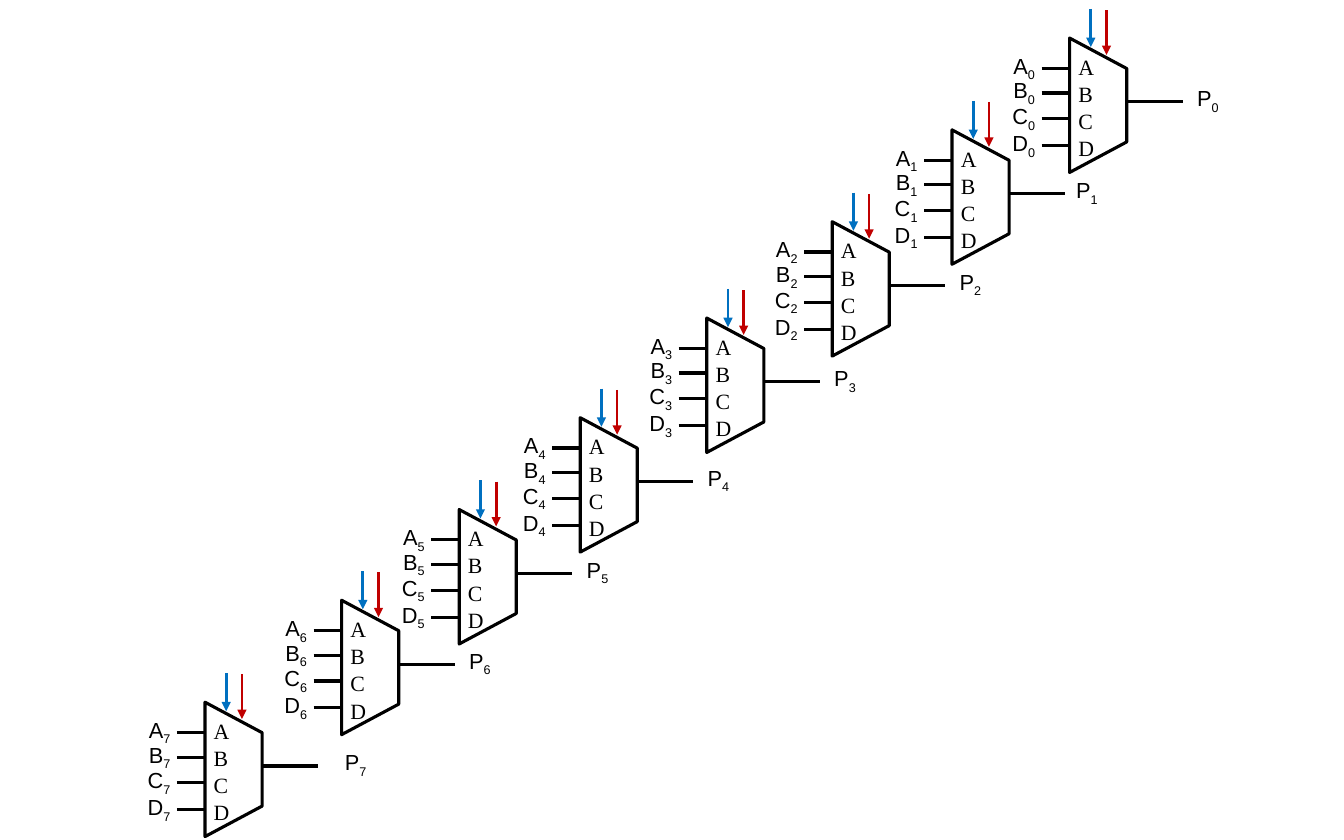
from pptx import Presentation
from pptx.dml.color import RGBColor
from pptx.enum import shapes, text
from pptx.oxml import ns, xmlchemy
from pptx.util import Inches, Pt

COLORS = {"ink": "000000", "body": "FFFFFF", "select_blue": "0070C0", "select_red": "C00000"}

MUX_WIDTH, MUX_HEIGHT = 0.51, 1.2
# Left and top of each multiplexer, and the distance from its left to the output label
MUXES = [
    (9.55, 0.34, 1.04),
    (8.5, 1.16, 1.01),
    (7.43, 1.98, 1.04),
    (6.31, 2.84, 1.04),
    (5.18, 3.73, 1.04),
    (4.1, 4.55, 1.04),
    (3.05, 5.36, 1.04),
    (1.83, 6.27, 1.15),
]
# Input name: height of its wire below the multiplexer top, left of its label
INPUTS = {"A": (0.27, -0.6), "B": (0.49, -0.6), "C": (0.72, -0.61), "D": (0.96, -0.61)}
# Colour, x, start and end of each select arrow
SELECTS = [("select_blue", 0.19, -0.26, 0.08), ("select_red", 0.33, -0.25, 0.15)]


def rgb(name):
    return RGBColor.from_string(COLORS[name])


def add_wire(group, start, end, color="ink", width=2, arrow=False):
    points = [Inches(length) for length in (*start, *end)]
    wire = group.shapes.add_connector(shapes.MSO_CONNECTOR.STRAIGHT, *points)
    wire.line.color.rgb = rgb(color)
    wire.line.width = Pt(width)
    properties = wire._element.spPr
    if arrow:
        head = xmlchemy.OxmlElement("a:tailEnd")
        head.set("type", "triangle")
        properties.find(ns.qn("a:ln")).append(head)
    properties.append(xmlchemy.OxmlElement("a:effectLst"))


def add_text(group, lines, left, top, width, height, font="Arial", size=14,
             subscript=None, wrap=False, spacing=None):
    """Add one paragraph a line, each followed by the subscript if there is one."""
    frame = group.shapes.add_textbox(
        Inches(left), Inches(top), Inches(width), Inches(height)).text_frame
    frame.word_wrap = wrap
    frame.auto_size = (text.MSO_AUTO_SIZE.NONE if wrap
                       else text.MSO_AUTO_SIZE.SHAPE_TO_FIT_TEXT)
    for number, line in enumerate(lines):
        paragraph = frame.add_paragraph() if number else frame.paragraphs[0]
        paragraph.line_spacing = spacing
        for part in filter(None, (line, subscript)):
            run = paragraph.add_run()
            run.text = part
            run.font.name = font
            run.font.size = Pt(size)
            run.font.color.rgb = rgb("ink")
            if part is subscript:
                run._r.get_or_add_rPr().set("baseline", "-25000")


def add_mux_body(group, left, top):
    """Add a trapezoid turned so that its short side faces right."""
    inset = (MUX_HEIGHT - MUX_WIDTH) / 2
    body = group.shapes.add_shape(
        shapes.MSO_SHAPE.TRAPEZOID, Inches(left - inset), Inches(top + inset),
        Inches(MUX_HEIGHT), Inches(MUX_WIDTH))
    body.rotation = 90
    body.adjustments[0] = 0.534
    body.shadow.inherit = False
    body.fill.solid()
    body.fill.fore_color.rgb = rgb("body")
    body.line.color.rgb = rgb("ink")
    body.line.width = Pt(2)


def add_mux(slide, bit, left, top, label_offset):
    """Add the multiplexer of one bit with its select, input and output wires."""
    group = slide.shapes.add_group_shape()
    add_mux_body(group, left, top)

    output_y = top + 0.57
    output_x = left + MUX_WIDTH
    add_wire(group, (output_x, output_y), (output_x + 0.5, output_y))
    for color, x, start, end in SELECTS:
        add_wire(group, (left + x, top + start), (left + x, top + end),
                 color=color, width=1.75, arrow=True)

    add_text(group, INPUTS, left - 0.02, top + 0.08, 0.48, 1.1,
             font="Times New Roman", wrap=True, spacing=1.04)
    add_text(group, ["P"], left + label_offset, output_y - 0.2, 0.41, 0.34,
             subscript=str(bit))

    for name, (wire_offset, label_x) in INPUTS.items():
        wire_y = top + wire_offset
        add_wire(group, (left - 0.25, wire_y), (left, wire_y))
        add_text(group, [name], left + label_x, wire_y - 0.19, 0.41, 0.34,
                 subscript=str(bit))


def main():
    deck = Presentation()
    deck.slide_width, deck.slide_height = Inches(12), Inches(7.5)
    slide = deck.slides.add_slide(deck.slide_layouts[6])
    for bit, placement in enumerate(MUXES):
        add_mux(slide, bit, *placement)
    deck.save("out.pptx")


if __name__ == "__main__":
    main()
